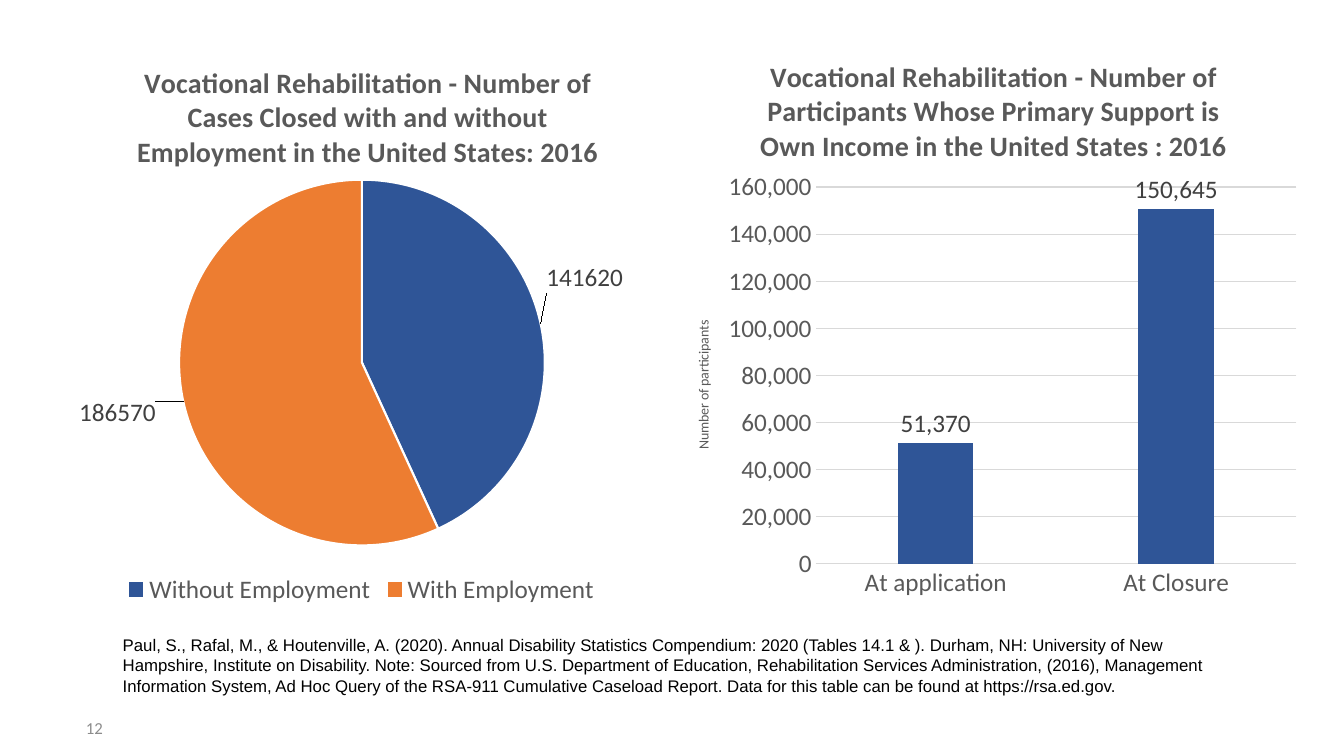
from dataclasses import dataclass
from lxml import etree
from pptx import Presentation
from pptx.chart.data import CategoryChartData
from pptx.dml.color import RGBColor
from pptx.enum.chart import XL_CHART_TYPE as ChartType, XL_LABEL_POSITION as LabelPosition
from pptx.enum.chart import XL_LEGEND_POSITION as LegendPosition, XL_TICK_MARK as TickMark
from pptx.enum.text import MSO_ANCHOR as Anchor, PP_ALIGN as Align
from pptx.oxml.ns import qn
from pptx.util import Pt


@dataclass(frozen=True)
class Theme:
    blue = RGBColor.from_string("2F5597")
    orange = RGBColor.from_string("ED7D31")
    black = RGBColor.from_string("000000")
    white = RGBColor.from_string("FFFFFF")
    heading = RGBColor.from_string("595959")
    label = RGBColor.from_string("404040")
    number = RGBColor.from_string("8C8C8C")
    rule = RGBColor.from_string("D9D9D9")
    title_size = Pt(20)
    chart_size = Pt(18)
    note_size = Pt(12)
    axis_title_size = Pt(10)
    chart_font = "Calibri"
    note_font = "Arial"


theme = Theme()


def write(frame, text, size, color, font=theme.chart_font, bold=False, align=None):
    para = frame.paragraphs[0]
    para.alignment = align
    span = para.add_run()
    span.text = text
    span.font.name, span.font.size = font, size
    span.font.bold, span.font.color.rgb = bold, color
    return para


def place(element, index, edge=True, **fractions):
    for old in element.findall(qn("c:layout")):
        element.remove(old)
    layout = etree.Element(qn("c:layout"))
    element.insert(index, layout)
    manual = etree.SubElement(layout, qn("c:manualLayout"))
    if "w" in fractions:
        etree.SubElement(manual, qn("c:layoutTarget")).set("val", "inner")
    if edge:
        for mode in ("xMode", "yMode"):
            etree.SubElement(manual, qn(f"c:{mode}")).set("val", "edge")
    for name, value in fractions.items():
        etree.SubElement(manual, qn(f"c:{name}")).set("val", str(value))


deck = Presentation()
deck.slide_width, deck.slide_height = Pt(960), Pt(540)
page = deck.slides.add_slide(deck.slide_layouts[6])

number_box = page.shapes.add_textbox(Pt(12), Pt(505.5), Pt(68.5), Pt(29))
number_box.text_frame.word_wrap = True
number_box.text_frame.vertical_anchor = Anchor.MIDDLE
number_para = write(number_box.text_frame, "12", theme.note_size, theme.number, align=Align.RIGHT)
number_para.space_after = Pt(6)

panels = [
    (ChartType.PIE, 36.7, 442.8,
     "Vocational Rehabilitation - Number of Cases Closed with and without "
     "Employment in the United States: 2016",
     {"Without Employment": 141620, "With Employment": 186570},
     "General", LabelPosition.BEST_FIT,
     dict(x=0.13, y=0.05), dict(x=0.206, y=0.26, w=0.59, h=0.63)),
    (ChartType.COLUMN_CLUSTERED, 480.2, 455,
     "Vocational Rehabilitation - Number of Participants Whose Primary Support is "
     "Own Income in the United States : 2016",
     {"At application": 51370, "At Closure": 150645},
     "#,##0", LabelPosition.OUTSIDE_END,
     dict(x=0.13, y=0.04), dict(x=0.225, y=0.273, w=0.755, h=0.648)),
]
charts = []
for kind, left, width, title, values, number_format, position, title_place, plot_place in panels:
    data = CategoryChartData(number_format=number_format)
    data.categories = list(values)
    data.add_series("Series 1", list(values.values()))
    chart = page.shapes.add_chart(kind, Pt(left), Pt(20.2), Pt(width), Pt(415.4), data).chart
    chart.font.name, chart.font.size = theme.chart_font, theme.axis_title_size
    chart.has_title = True
    write(chart.chart_title.text_frame, title, theme.title_size, theme.heading,
          bold=True, align=Align.CENTER)
    place(chart.chart_title._element, 1, **title_place)
    place(chart._chartSpace.chart.plotArea, 0, **plot_place)
    chart.plots[0].vary_by_categories = kind == ChartType.PIE
    labels = chart.plots[0].series[0].data_labels
    labels.show_value = True
    labels.position = position
    labels.number_format, labels.number_format_is_linked = number_format, False
    labels.font.name, labels.font.size = theme.chart_font, theme.chart_size
    labels.font.color.rgb = theme.label
    charts.append(chart)

pie, columns = charts
pie.has_legend = True
pie.legend.position = LegendPosition.BOTTOM
pie.legend.include_in_layout = False
pie_points = pie.plots[0].series[0].points
slices = [(theme.blue, 0, -0.05), (theme.orange, -0.035, -0.01)]
for index, (color, shift_x, shift_y) in enumerate(slices):
    point = pie_points[index]
    point.format.fill.solid()
    point.format.fill.fore_color.rgb = color
    point.format.line.color.rgb = theme.white
    point.format.line.width = Pt(1.5)
    label = point.data_label
    label.position = LabelPosition.BEST_FIT
    label.font.name, label.font.size = theme.chart_font, theme.chart_size
    label.font.color.rgb = theme.label
    place(label._dLbl, 1, edge=False, x=shift_x, y=shift_y)

column_plot = columns.plots[0]
column_plot.gap_width, column_plot.overlap = 219, -27
column_fill = column_plot.series[0].format.fill
column_fill.solid()
column_fill.fore_color.rgb = theme.blue
columns.has_legend = False
category_axis, value_axis = columns.category_axis, columns.value_axis
for axis in (category_axis, value_axis):
    axis.major_tick_mark = axis.minor_tick_mark = TickMark.NONE
for line in (category_axis.format.line, value_axis.major_gridlines.format.line):
    line.color.rgb = theme.rule
    line.width = Pt(0.75)
value_axis.format.line.fill.background()
value_axis.minimum_scale, value_axis.maximum_scale = 0, 160000
value_axis.major_unit = 20000
value_axis.tick_labels.number_format = "#,##0"
value_axis.tick_labels.number_format_is_linked = False
axis_title = value_axis.axis_title.text_frame
write(axis_title, "Number of participants", theme.axis_title_size, theme.heading)
axis_title._txBody.bodyPr.set("rot", "-5400000")
axis_title._txBody.bodyPr.set("vert", "horz")

for font in (pie.legend.font, category_axis.tick_labels.font, value_axis.tick_labels.font):
    font.name, font.size = theme.chart_font, theme.chart_size
    font.color.rgb = theme.heading

source_box = page.shapes.add_textbox(Pt(80.6), Pt(450), Pt(787.7), Pt(51))
source_box.text_frame.word_wrap = True
write(source_box.text_frame,
      "Paul, S., Rafal, M., & Houtenville, A. (2020). Annual Disability Statistics Compendium: "
      "2020 (Tables 14.1 & ). Durham, NH: University of New Hampshire, Institute on Disability. "
      "Note: Sourced from U.S. Department of Education, Rehabilitation Services Administration, "
      "(2016), Management Information System, Ad Hoc Query of the RSA-911 Cumulative Caseload "
      "Report. Data for this table can be found at https://rsa.ed.gov.",
      theme.note_size, theme.black, font=theme.note_font)

deck.save("out.pptx")
